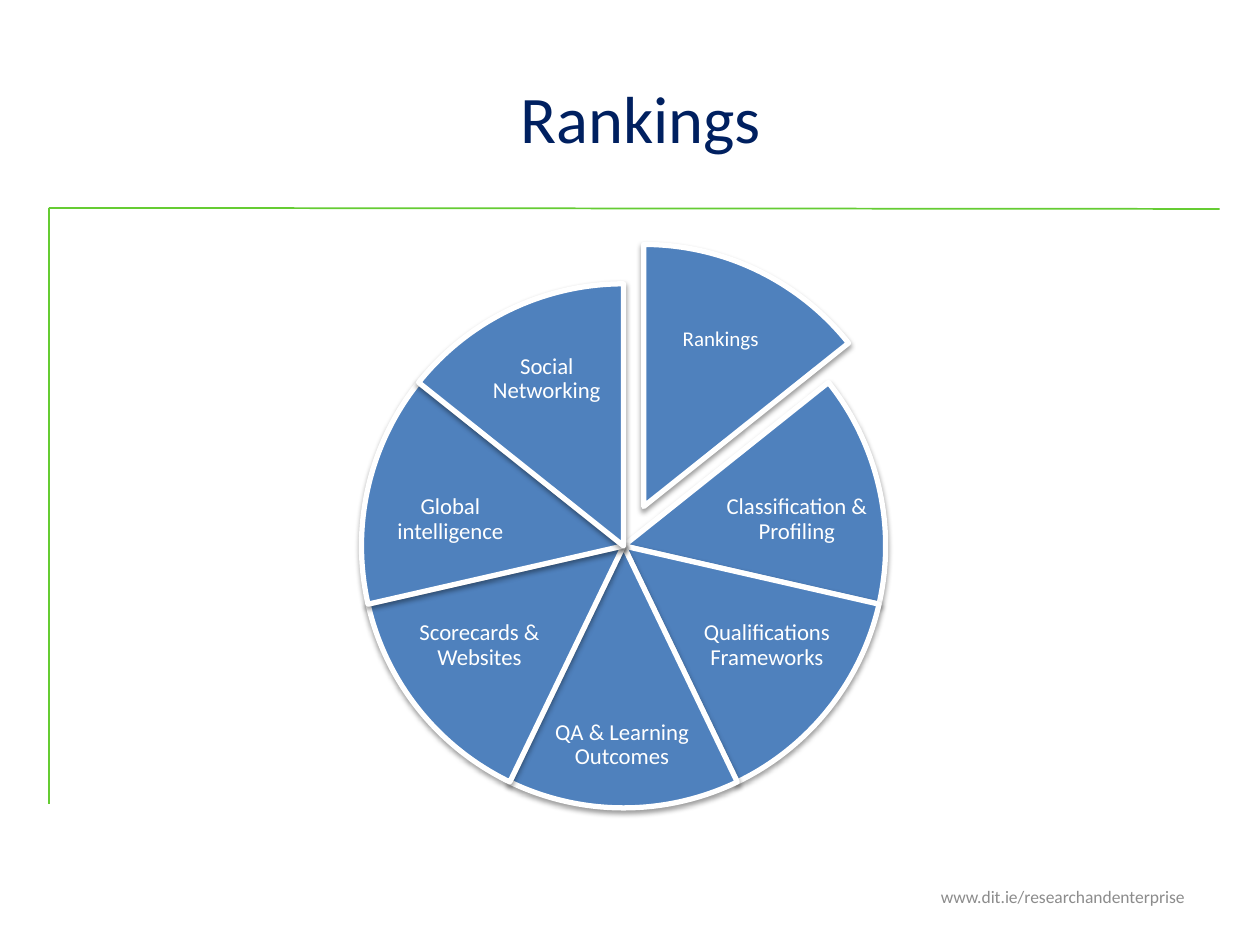
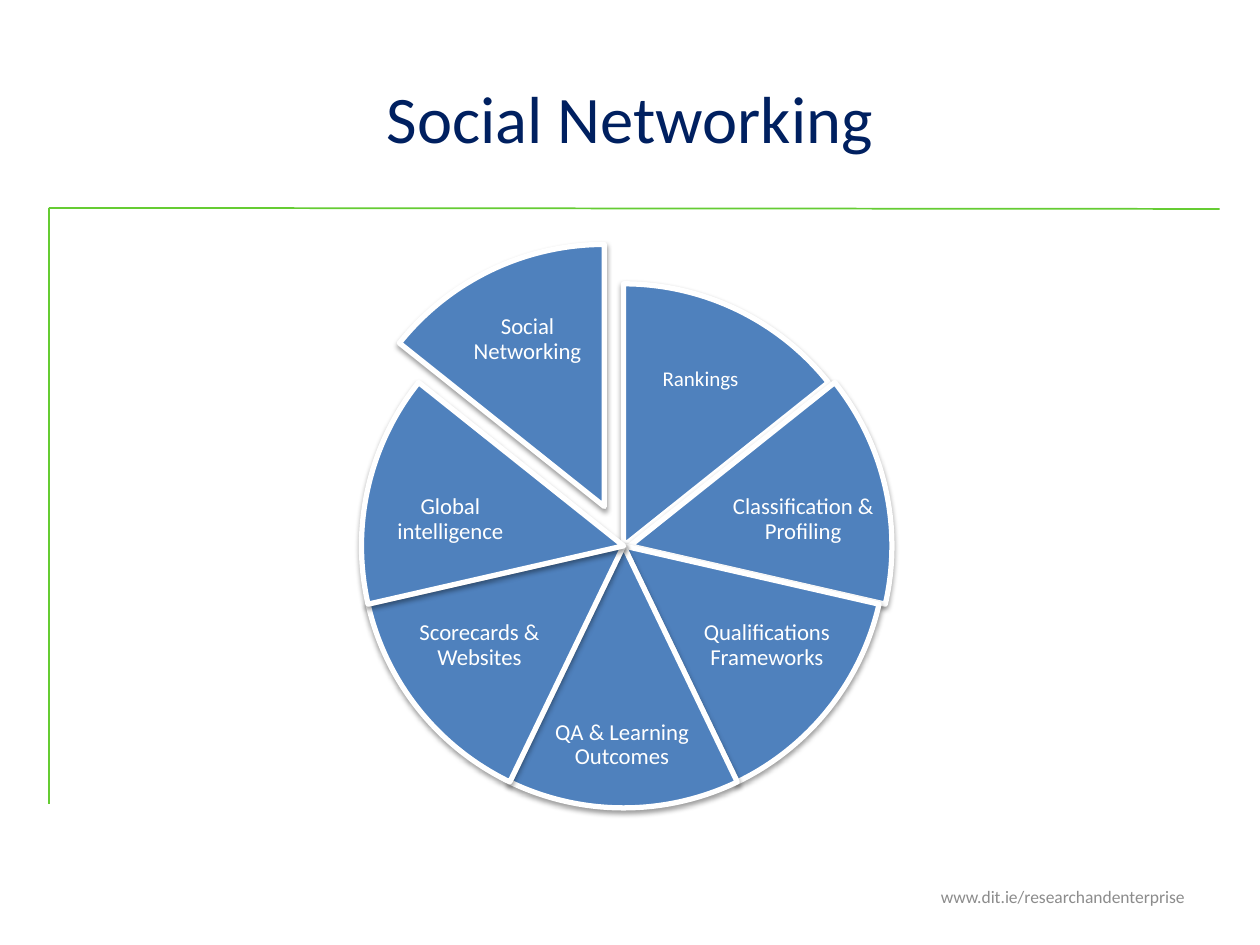
from lxml.etree import SubElement
from pptx import Presentation
from pptx.dml.color import RGBColor
from pptx.enum.shapes import MSO_CONNECTOR as Connector, MSO_SHAPE as Preset
from pptx.enum.text import MSO_ANCHOR as Anchor, PP_ALIGN as Align
from pptx.oxml.ns import qn
from pptx.util import Pt

NAVY, GREEN, BLUE, GREY, WHITE = "002060", "65CC33", "4F81BD", "8C8C8C", "FFFFFF"
PIE_LEFT, PIE_TOP, PIE_SIZE = 206.6, 162.2, 299.5
FIRST_ANGLE = 270
WEDGES = [
    ("Rankings", (359.3, 190.8, 82, 51.8), 12),
    ("Classification & Profiling", (411.8, 269.3, 87, 55.4), 13),
    ("Qualifications Frameworks", (398.9, 340.6, 78.5, 56.9), 13),
    ("QA & Learning Outcomes", (315.4, 397.4, 80, 56.9), 13),
    ("Scorecards & Websites", (234.7, 340.6, 78.5, 56.9), 13),
    ("Global intelligence", (213.8, 269.3, 87, 55.4), 13),
    ("Social Networking", (271.4, 190.8, 82, 51.8), 13),
]
SLIDES = [
    ("Rankings", (20.2, 21.6, 692, 90), {"Rankings": (11.5, -22.5)}),
    ("Social Networking", (36, 21.6, 648, 90),
     {"Social Networking": (-11, -22.5), "Classification & Profiling": (3.6, 0)}),
]


def color(value):
    """Turn a hex string into a colour."""
    return RGBColor.from_string(value)


class Deck:
    """Hold the shared style and the current slide."""

    font = "Calibri"

    def __init__(self):
        """Start an empty 10 by 7.5 inch presentation."""
        self.presentation = Presentation()
        self.presentation.slide_width = Pt(720)
        self.presentation.slide_height = Pt(540)
        self.slide = None

    def add_slide(self, title, title_box):
        """Add a slide with its frame lines, footer and title."""
        layout = self.presentation.slide_layouts[6]
        self.slide = self.presentation.slides.add_slide(layout)
        self.line(28, 118.8, 28, 459.4)
        self.line(28, 118.8, 697, 119.4)
        self.text("www.dit.ie/researchandenterprise", (516.2, 498.2, 167.8, 28.8),
                  10, GREY, align=Align.RIGHT)
        self.text(title, title_box, 38, NAVY)

    def line(self, x1, y1, x2, y2):
        """Draw one thin green line."""
        connector = self.slide.shapes.add_connector(
            Connector.STRAIGHT, Pt(x1), Pt(y1), Pt(x2), Pt(y2))
        connector.line.color.rgb = color(GREEN)
        connector.line.width = Pt(1)
        SubElement(connector._element.spPr, qn("a:effectLst"))

    def text(self, words, box, size, hue, align=Align.CENTER, insets=(7.2, 3.6), spacing=1.0):
        """Write one vertically centred paragraph."""
        frame = self.slide.shapes.add_textbox(*map(Pt, box)).text_frame
        frame.word_wrap = True
        frame.vertical_anchor = Anchor.MIDDLE
        frame.margin_left = frame.margin_right = Pt(insets[0])
        frame.margin_top = frame.margin_bottom = Pt(insets[1])
        paragraph = frame.paragraphs[0]
        paragraph.text = words
        paragraph.alignment = align
        paragraph.line_spacing = spacing
        paragraph.font.name = self.font
        paragraph.font.size = Pt(size)
        paragraph.font.color.rgb = color(hue)

    def shadow(self, shape):
        """Give a shape a soft shadow straight below it."""
        shape.shadow.inherit = False
        effects = shape._element.spPr.find(qn("a:effectLst"))
        outer = SubElement(effects, qn("a:outerShdw"), blurRad=str(Pt(3.1)),
                           dist=str(Pt(1.6)), dir="5400000", rotWithShape="0")
        black = SubElement(outer, qn("a:srgbClr"), val="000000")
        SubElement(black, qn("a:alpha"), val="38000")

    def wedge(self, start, end, dx, dy):
        """Draw a pie wedge between two angles in degrees."""
        shape = self.slide.shapes.add_shape(
            Preset.PIE, Pt(PIE_LEFT + dx), Pt(PIE_TOP + dy), Pt(PIE_SIZE), Pt(PIE_SIZE))
        for index, angle in enumerate((start, end)):
            shape.adjustments[index] = angle % 360 * 0.6
        shape.fill.solid()
        shape.fill.fore_color.rgb = color(BLUE)
        shape.line.color.rgb = color(WHITE)
        shape.line.width = Pt(3)
        self.shadow(shape)

    def wheel(self, shifts):
        """Draw equal labelled wedges, moving some of them outwards."""
        step = 360 / len(WEDGES)
        for index, (label, (left, top, width, height), size) in enumerate(WEDGES):
            dx, dy = shifts.get(label, (0, 0))
            start = FIRST_ANGLE + index * step
            self.wedge(start, start + step, dx, dy)
            self.text(label, (left + dx, top + dy, width, height), size, WHITE,
                      insets=(1.4, 1.4), spacing=0.9)


def main():
    """Build and save the slides."""
    deck = Deck()
    for title, title_box, shifts in SLIDES:
        deck.add_slide(title, title_box)
        deck.wheel(shifts)
    deck.presentation.save("out.pptx")


if __name__ == "__main__":
    main()
